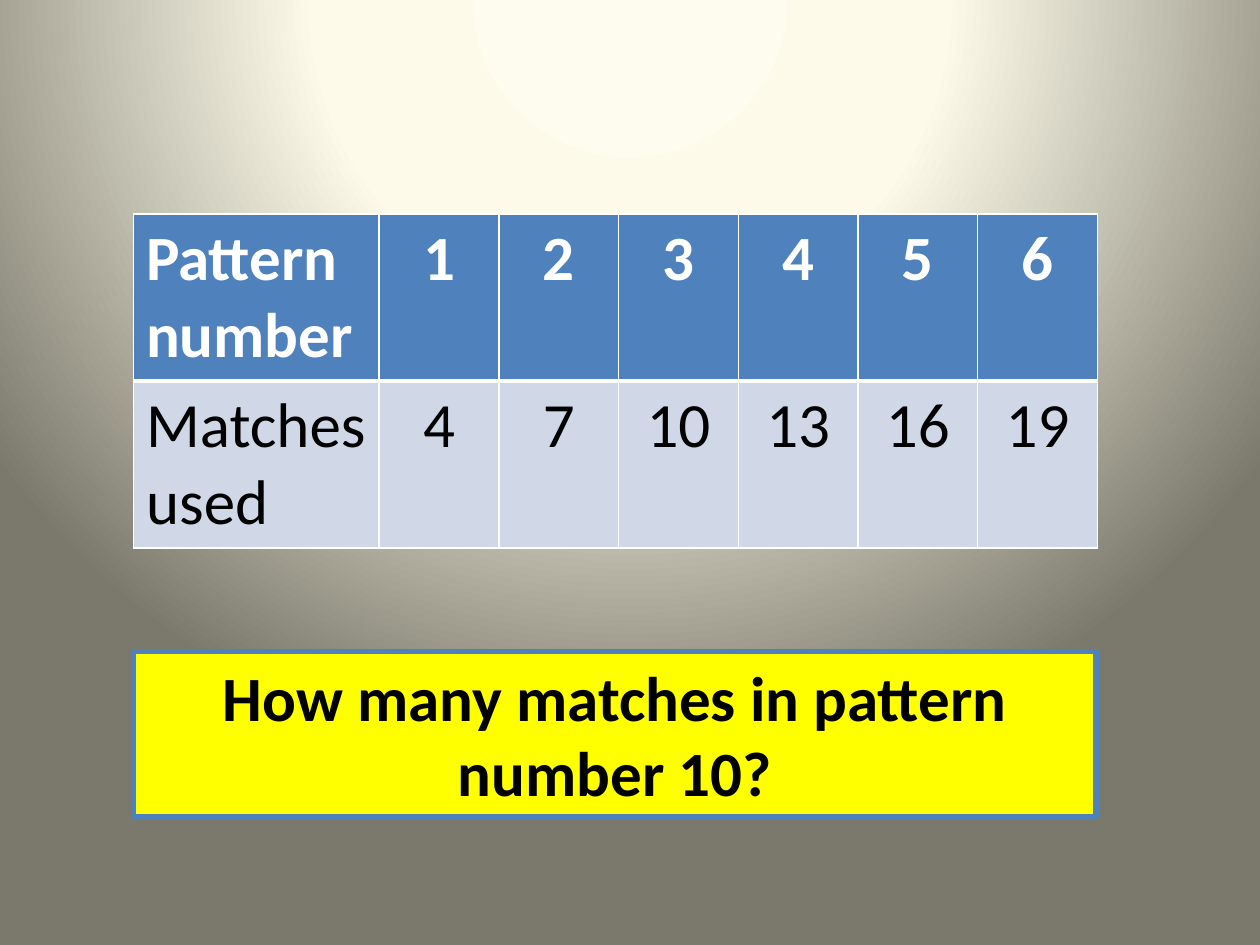
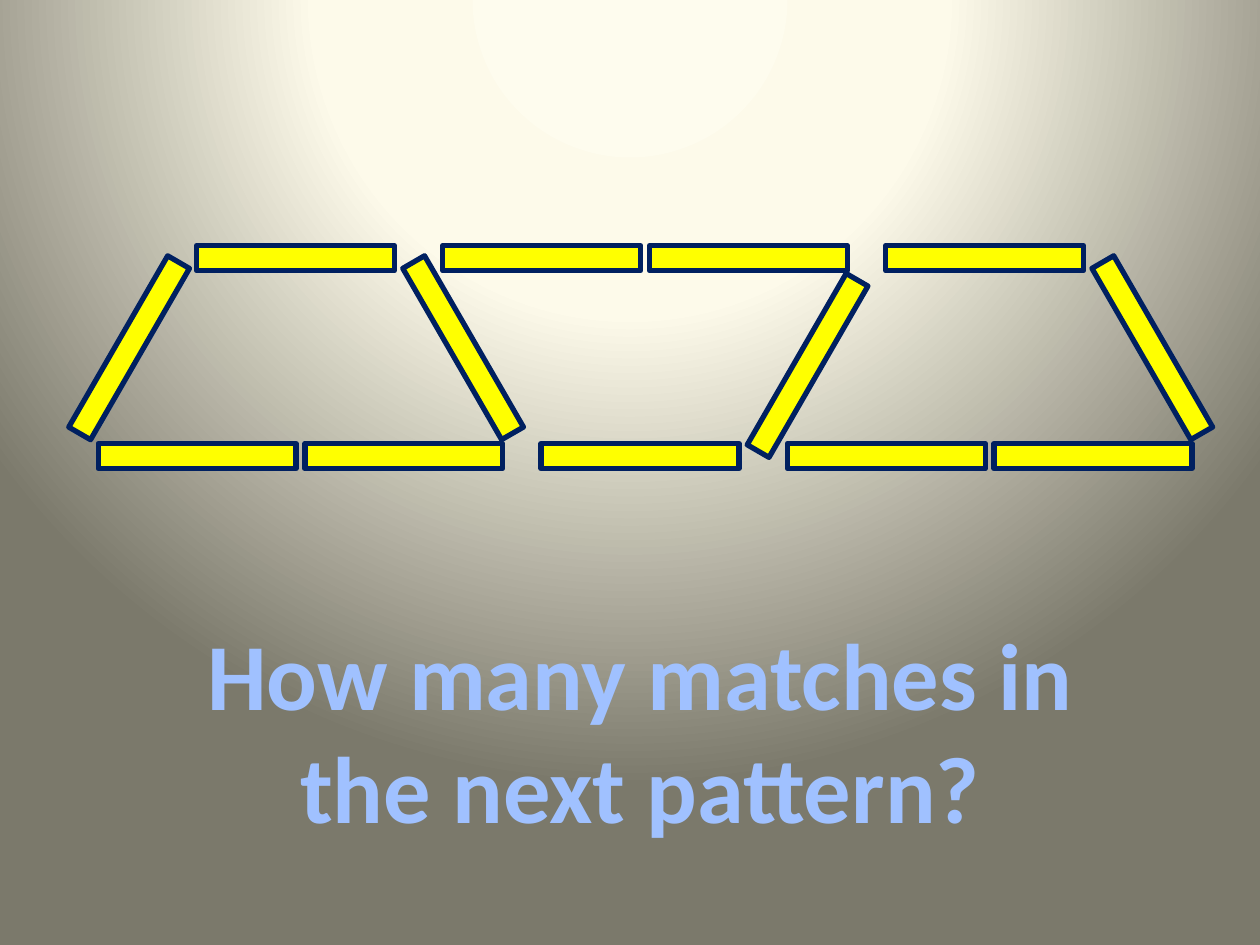
from lxml import etree
from pptx import Presentation
from pptx.dml.color import RGBColor
from pptx.enum.shapes import MSO_SHAPE
from pptx.enum.text import MSO_ANCHOR, MSO_AUTO_SIZE, PP_ALIGN
from pptx.oxml.ns import qn
from pptx.util import Inches, Pt

RECTANGLE = MSO_SHAPE.RECTANGLE
CENTER, LEFT = PP_ALIGN.CENTER, PP_ALIGN.LEFT
MIDDLE = MSO_ANCHOR.MIDDLE
GROW = MSO_AUTO_SIZE.SHAPE_TO_FIT_TEXT

FONT = "Calibri"
WHITE, BLACK, YELLOW = "FFFFFF", "000000", "FFFF00"
BLUE, PALE_BLUE, NAVY, OUTLINE_BLUE = "4F81BD", "D0D8E8", "002060", "467AB8"
BACKGROUND_STOPS = [(0, "FEFCEE"), (40, "FDFAEA"), (100, "7B796B")]
TITLE_STOPS = [(0, "BFD3F9"), (9, "A0C1FF"), (50, "003D85"),
               (79, "A0C1FF"), (100, "BFD3F9")]


def color(hex_string):
    return RGBColor.from_string(hex_string)


def set_gradient(fill, owner, stops):
    """Give fill these stops and return its emptied-of-direction XML element."""
    fill.gradient()
    gradient = owner.find(".//" + qn("a:gradFill"))
    for child in list(gradient):
        gradient.remove(child)
    stop_list = etree.SubElement(gradient, qn("a:gsLst"))
    for percent, hex_string in stops:
        stop = etree.SubElement(stop_list, qn("a:gs"), pos=str(percent * 1000))
        etree.SubElement(stop, qn("a:srgbClr"), val=hex_string)
    return gradient


presentation = Presentation()
presentation.slide_width = Inches(10)
presentation.slide_height = Inches(7.5)
blank = presentation.slide_layouts[6]

# Shared background: a circular glow from above the slide
master = presentation.slide_master
glow = set_gradient(master.background.fill, master.element, BACKGROUND_STOPS)
circle = etree.SubElement(glow, qn("a:path"), path="circle")
etree.SubElement(circle, qn("a:fillToRect"),
                 l="50000", t="-80000", r="50000", b="180000")

# Slide 1: table of matches and question
slide = presentation.slides.add_slide(blank)
rows = [["Pattern number", "1", "2", "3", "4", "5", "6"],
        ["Matches used", "4", "7", "10", "13", "16", "19"]]
# Fill, text colour, bold, top border and bottom border in points
row_styles = [(BLUE, WHITE, True, 1, 3), (PALE_BLUE, BLACK, False, 3, 1)]
table = slide.shapes.add_table(2, 7, Inches(1.06), Inches(1.7),
                               Inches(7.65), Inches(2.6)).table
for index, column in enumerate(table.columns):
    column.width = Inches(0.95 if index else 1.95)

for row_index, (texts, style) in enumerate(zip(rows, row_styles)):
    fill_color, text_color, bold, top, bottom = style
    for column_index, text in enumerate(texts):
        cell = table.cell(row_index, column_index)
        properties = cell._tc.get_or_add_tcPr()
        for side, points in zip("LRTB", (1, 1, top, bottom)):
            border = etree.SubElement(properties, qn("a:ln" + side), w=str(Pt(points)))
            border_fill = etree.SubElement(border, qn("a:solidFill"))
            etree.SubElement(border_fill, qn("a:srgbClr"), val=WHITE)
        cell.fill.solid()
        cell.fill.fore_color.rgb = color(fill_color)
        paragraph = cell.text_frame.paragraphs[0]
        paragraph.alignment = CENTER if column_index else LEFT
        run = paragraph.add_run()
        run.text = text
        run.font.name, run.font.size, run.font.bold = FONT, Pt(36), bold
        run.font.color.rgb = color(text_color)

question = slide.shapes.add_shape(RECTANGLE, Inches(1.06), Inches(5.17),
                                  Inches(7.64), Inches(1.31))
question.shadow.inherit = False
question.fill.solid()
question.fill.fore_color.rgb = color(YELLOW)
question.line.color.rgb = color(BLUE)
question.line.width = Pt(3)
frame = question.text_frame
frame.word_wrap, frame.auto_size = True, GROW
frame.vertical_anchor = MIDDLE
paragraph = frame.paragraphs[0]
paragraph.alignment = CENTER
run = paragraph.add_run()
run.text = "How many matches in pattern number 10?"
run.font.name, run.font.size, run.font.bold = FONT, Pt(36), True
run.font.color.rgb = color(BLACK)

# Slide 2: three trapezoids of matches and question
slide = presentation.slides.add_slide(blank)
TOP, BOTTOM = 1.95, 3.52
upright = [(1.56, TOP, 0), (0.78, BOTTOM, 0), (2.42, BOTTOM, 0), (2.89, 2.66, 60)]
inverted = [(1.56, BOTTOM, 0), (0.78, TOP, 0), (2.42, TOP, 0), (2.89, 2.8, 300)]
first_side = (0.24, 2.66, 300)
trapezoids = [upright + [first_side], inverted, upright]
for index, matches in enumerate(trapezoids):
    group = slide.shapes.add_group_shape()
    for left, top, rotation in matches:
        match = group.shapes.add_shape(RECTANGLE, Inches(left + index * 2.735),
                                       Inches(top), Inches(1.57), Inches(0.2))
        match.rotation = rotation
        match.shadow.inherit = False
        match.fill.solid()
        match.fill.fore_color.rgb = color(YELLOW)
        match.line.color.rgb = color(NAVY)
        match.line.width = Pt(3)

title = slide.shapes.add_textbox(Inches(1.25), Inches(4.84), Inches(7.66), Inches(1.92))
frame = title.text_frame
frame.word_wrap, frame.auto_size = True, GROW
paragraph = frame.paragraphs[0]
paragraph.alignment = CENTER
run = paragraph.add_run()
run.text = "How many matches in the next pattern?"
run.font.name, run.font.size, run.font.bold = FONT, Pt(54), True
sheen = set_gradient(run.font.fill, run._r, TITLE_STOPS)
etree.SubElement(sheen, qn("a:lin"), ang="5400000", scaled="0")
outline = etree.Element(qn("a:ln"), w=str(Pt(0.83)))
outline_fill = etree.SubElement(outline, qn("a:solidFill"))
etree.SubElement(outline_fill, qn("a:srgbClr"), val=OUTLINE_BLUE)
sheen.addprevious(outline)

presentation.save("out.pptx")
